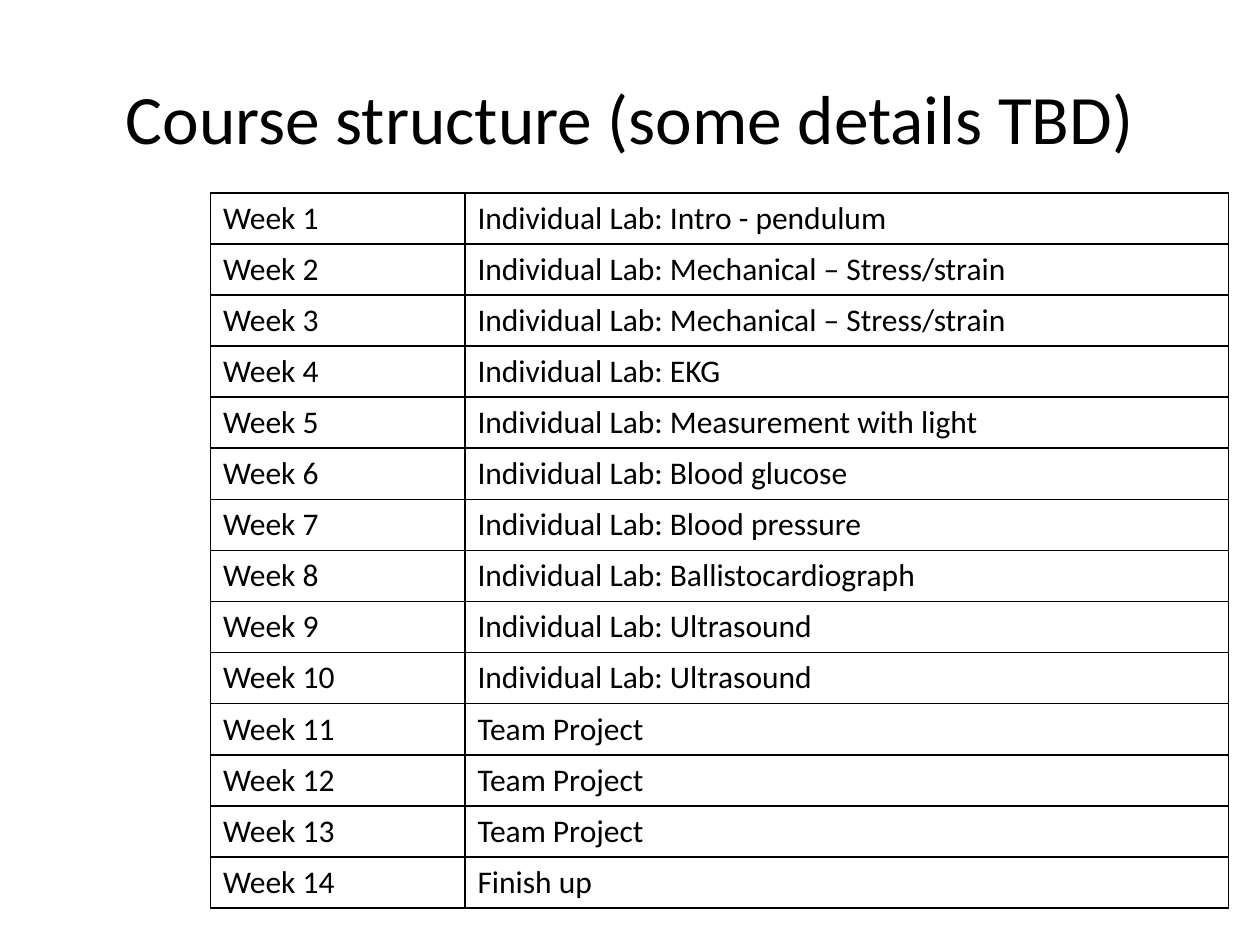
from dataclasses import dataclass

from lxml.etree import SubElement as Sub
from pptx import Presentation
from pptx.dml.color import RGBColor as Rgb
from pptx.enum.text import MSO_ANCHOR as Anchor, PP_ALIGN as Align
from pptx.oxml.ns import qn
from pptx.util import Inches, Pt

COLORS = {"ink": "000000", "paper": "FFFFFF"}
FONT = "Calibri"


@dataclass
class Stage:
    topic: str
    weeks: int = 1


LAB = "Individual Lab: "
STAGES = [
    Stage(LAB + "Intro - pendulum"),
    Stage(LAB + "Mechanical – Stress/strain", 2),
    Stage(LAB + "EKG"),
    Stage(LAB + "Measurement with light"),
    Stage(LAB + "Blood glucose"),
    Stage(LAB + "Blood pressure"),
    Stage(LAB + "Ballistocardiograph"),
    Stage(LAB + "Ultrasound", 2),
    Stage("Team Project", 3),
    Stage("Finish up"),
]


def style(para, size: float) -> None:
    para.font.name = FONT
    para.font.size = Pt(size)
    para.font.color.rgb = Rgb.from_string(COLORS["ink"])


def add_title(slide, text: str) -> None:
    title = slide.shapes.title
    title.left, title.top = Inches(0.5), Inches(0.3)
    title.width, title.height = Inches(9), Inches(1.25)
    frame = title.text_frame
    frame.text = text
    frame.word_wrap = True
    frame.vertical_anchor = Anchor.MIDDLE
    para = frame.paragraphs[0]
    para.alignment = Align.CENTER
    style(para, 39.6)


def add_borders(cell) -> None:
    props = cell._tc.get_or_add_tcPr()
    for side in ("lnL", "lnR", "lnT", "lnB"):
        line = Sub(props, qn(f"a:{side}"), w=str(Pt(1)))
        fill = Sub(line, qn("a:solidFill"))
        Sub(fill, qn("a:srgbClr"), val=COLORS["ink"])


def fill_cell(cell, text: str) -> None:
    cell.text = text
    style(cell.text_frame.paragraphs[0], 18)
    # Borders must come before the fill in the cell properties
    add_borders(cell)
    cell.fill.solid()
    cell.fill.fore_color.rgb = Rgb.from_string(COLORS["paper"])


def add_plan(slide, stages: list[Stage]) -> None:
    topics = [s.topic for s in stages for _ in range(s.weeks)]
    frame = slide.shapes.add_table(
        len(topics), 2, Inches(1.67), Inches(1.53), Inches(8.08), Inches(5.68)
    )
    table = frame.table
    table.first_row = table.horz_banding = False
    for col, width in zip(table.columns, (2.02, 6.06)):
        col.width = Inches(width)
    for week, topic in enumerate(topics, 1):
        for col, text in enumerate((f"Week {week}", topic)):
            fill_cell(table.cell(week - 1, col), text)


def main() -> None:
    deck = Presentation()
    deck.slide_width, deck.slide_height = Inches(10), Inches(7.5)
    slide = deck.slides.add_slide(deck.slide_layouts[5])
    # Heading
    add_title(slide, "Course structure (some details TBD)")
    # Weekly plan
    add_plan(slide, STAGES)
    deck.save("out.pptx")


if __name__ == "__main__":
    main()
